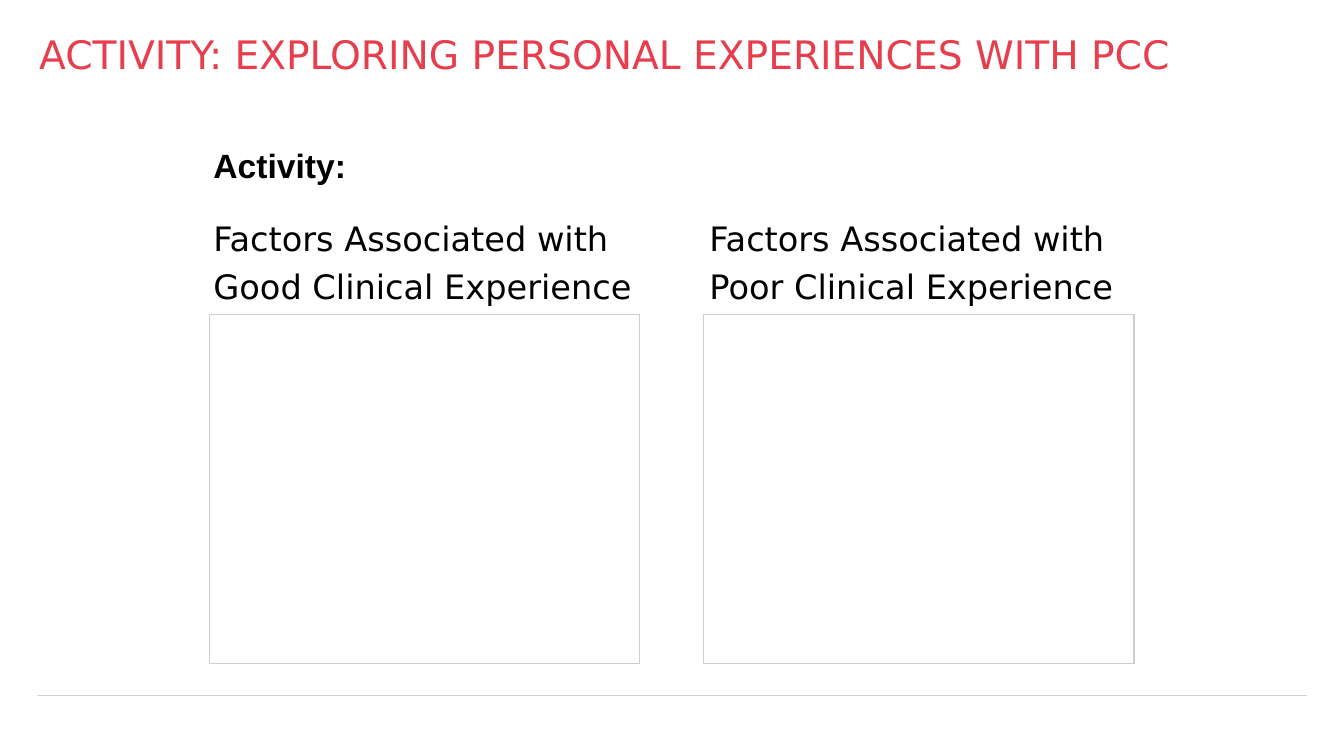
from lxml.etree import SubElement
from pptx import Presentation
from pptx.dml.color import RGBColor
from pptx.enum.shapes import MSO_CONNECTOR, MSO_SHAPE
from pptx.oxml.ns import qn
from pptx.util import Cm, Pt

SANS = "DejaVu Sans"
BLACK = "000000"


def rgb(hex_color):
    return RGBColor.from_string(hex_color)


def add_text(slide, lines, left, top, width, height, size=24, font=SANS,
             color=BLACK, bold=False, inset=0.15):
    """Add a text box with one paragraph per line; inset is in centimetres."""
    frame = slide.shapes.add_textbox(Cm(left), Cm(top), Cm(width), Cm(height)).text_frame
    frame.word_wrap = True
    frame.margin_left = frame.margin_right = Cm(inset)
    frame.margin_top = frame.margin_bottom = Cm(inset)
    for index, line in enumerate(lines):
        paragraph = frame.add_paragraph() if index else frame.paragraphs[0]
        if index:
            paragraph.space_before = Pt(5.6)
        run = paragraph.add_run()
        run.text = line
        run.font.name = font
        run.font.size = Pt(size)
        run.font.bold = bold
        run.font.color.rgb = rgb(color)


def add_answer_box(slide, left, top, width, height):
    answer = slide.shapes.add_shape(
        MSO_SHAPE.RECTANGLE, Cm(left), Cm(top), Cm(width), Cm(height))
    answer.shadow.inherit = False
    answer.fill.background()
    answer.line.color.rgb = rgb("CECECE")
    answer.line.width = Pt(0.75)


def add_footer_rule(slide, left, right, y):
    rule = slide.shapes.add_connector(
        MSO_CONNECTOR.STRAIGHT, Cm(left), Cm(y), Cm(right), Cm(y))
    rule.line.color.rgb = rgb("262626")
    rule.line.width = Pt(0.25)
    properties = rule._element.spPr
    tint = properties.find(".//" + qn("a:srgbClr"))
    SubElement(tint, qn("a:alpha"), val="31000")
    SubElement(properties, qn("a:effectLst"))


def main():
    presentation = Presentation()
    presentation.slide_width = Cm(33.87)
    presentation.slide_height = Cm(19.05)
    slide = presentation.slides.add_slide(presentation.slide_layouts[6])

    add_footer_rule(slide, 0.94, 32.94, 17.53)
    add_text(slide, ["ACTIVITY: EXPLORING PERSONAL EXPERIENCES WITH PCC"],
             0.99, 0.76, 31.34, 2.44, size=28, color="E63E4D", inset=0)
    add_text(slide, ["Activity:"], 5.23, 3.51, 11.23, 1.3, font="Arial", bold=True)

    columns = [("Good", 5.23, 5.28), ("Poor", 17.73, 17.73)]
    for quality, heading_left, answer_left in columns:
        heading = ["Factors Associated with", f"{quality} Clinical Experience"]
        add_text(slide, heading, heading_left, 5.33, 11.23, 2.5)
        add_answer_box(slide, answer_left, 7.92, 10.85, 8.79)

    presentation.save("out.pptx")


if __name__ == "__main__":
    main()
